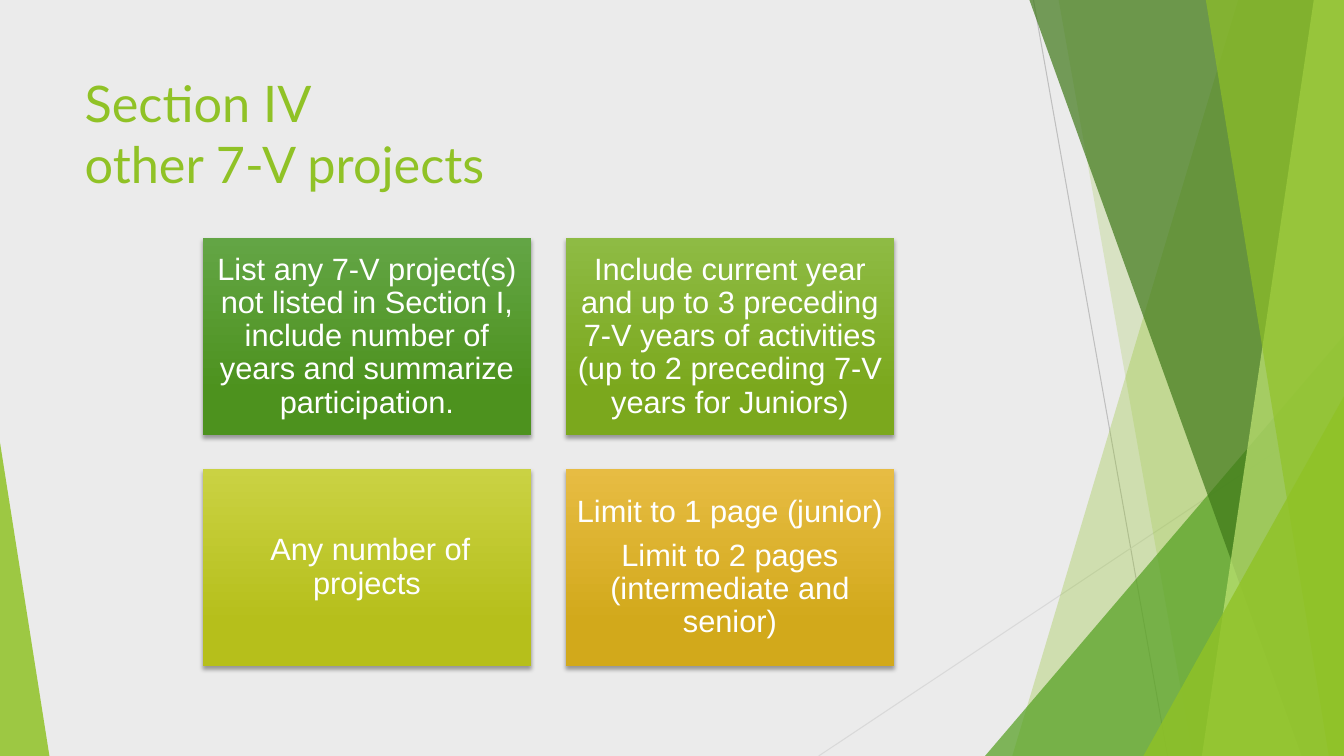
from dataclasses import dataclass

from lxml import etree
from pptx import Presentation
from pptx import util as u
from pptx.dml.color import RGBColor
from pptx.enum import shapes, text
from pptx.oxml.ns import qn

WIDTH, HEIGHT = 13.33, 7.5
COLORS = {
    "background": "EBEBEB", "lime": "90C226", "green": "54A021",
    "forest": "3F7819", "pale": "C0E474", "white": "FFFFFF",
    "shadow": "000000", "line": "BFBFBF", "light_line": "D9D9D9",
}


@dataclass
class Ray:
    start: tuple[float, float]
    end: tuple[float, float]
    color: str


@dataclass
class Wedge:
    """Band from a slanted left edge to the right side of the slide."""
    top_x: float
    bottom_x: float
    color: str
    opacity: int


@dataclass
class Corner:
    """Right triangle standing on the bottom of the slide."""
    left: float
    top: float
    width: float
    apex: float
    color: str
    opacity: int


@dataclass
class Card:
    paragraphs: list[str]
    light: str
    dark: str


RAYS = [
    Ray((10.25, 0), (11.58, HEIGHT), "line"),
    Ray((WIDTH, 4.03), (8.12, HEIGHT), "light_line"),
]
FACETS = [
    Wedge(12.28, 10.04, "lime", 30),
    Wedge(10.5, 11.83, "lime", 20),
    Corner(9.77, 3.33, 3.56, 1, "green", 72),
    Wedge(10.21, 12.91, "forest", 70),
    Wedge(13.03, 11.92, "pale", 70),
    Wedge(11.96, 13.18, "lime", 65),
    Corner(11.34, 3.93, 1.99, 1, "lime", 80),
    Corner(0, 4.39, 0.49, 0, "lime", 85),
]
CARDS = [
    Card(["List any 7-V project(s) not listed in Section I, include number of "
          "years and summarize participation."], "63A545", "4D921E"),
    Card(["Include current year and up to 3 preceding 7-V years of activities "
          "(up to 2 preceding 7-V years for Juniors)"], "8EBB44", "7BA81D"),
    Card([" Any number of projects"], "CAD243", "B6BF1B"),
    Card(["Limit to 1 page (junior)",
          "Limit to 2 pages (intermediate and senior)"], "E7BC43", "D2A91B"),
]
CARD_LEFT, CARD_TOP, CARD_WIDTH, CARD_HEIGHT = 2.01, 2.36, 3.26, 1.96
STEP_X, STEP_Y = 3.6, 2.29


def rgb(name: str) -> RGBColor:
    return RGBColor.from_string(COLORS.get(name, name))


def apply(target, values: dict) -> None:
    for name, value in values.items():
        setattr(target, name, value)


def style_text(para, size: float, font: str, color: str) -> None:
    for span in para.runs:
        apply(span.font, {"size": u.Pt(size), "name": font})
        span.font.color.rgb = rgb(color)


def draw_ray(page, ray: Ray) -> None:
    points = [u.Inches(value) for value in (*ray.start, *ray.end)]
    line = page.shapes.add_connector(shapes.MSO_CONNECTOR.STRAIGHT, *points)
    line.line.width = u.Pt(0.75)
    line.line.color.rgb = rgb(ray.color)
    etree.SubElement(line._element.spPr, qn("a:effectLst"))


def draw_facet(page, facet: Wedge | Corner) -> None:
    if isinstance(facet, Wedge):
        corners = [(facet.top_x, 0), (WIDTH, 0), (WIDTH, HEIGHT),
                   (facet.bottom_x, HEIGHT)]
        points = [(u.Inches(x), u.Inches(y)) for x, y in corners]
        builder = page.shapes.build_freeform(*points[0])
        builder.add_line_segments(points[1:], close=True)
        shape = builder.convert_to_shape()
    else:
        shape = page.shapes.add_shape(
            shapes.MSO_SHAPE.ISOSCELES_TRIANGLE,
            u.Inches(facet.left), u.Inches(facet.top),
            u.Inches(facet.width), u.Inches(HEIGHT - facet.top))
        shape.adjustments[0] = facet.apex
    shape.shadow.inherit = False
    shape.line.fill.background()
    shape.fill.solid()
    shape.fill.fore_color.rgb = rgb(facet.color)
    color = shape._element.spPr.find(".//" + qn("a:srgbClr"))
    etree.SubElement(color, qn("a:alpha"), val=str(facet.opacity * 1000))


def add_shadow(shape) -> None:
    shape.shadow.inherit = False
    effects = shape._element.spPr.find(qn("a:effectLst"))
    shadow = etree.SubElement(
        effects, qn("a:outerShdw"), blurRad=str(u.Pt(3)), dist=str(u.Pt(2)),
        dir="5400000", rotWithShape="0")
    color = etree.SubElement(shadow, qn("a:srgbClr"), val=COLORS["shadow"])
    etree.SubElement(color, qn("a:alpha"), val="35000")


def draw_card(page, card: Card, row: int, column: int) -> None:
    box = page.shapes.add_shape(
        shapes.MSO_SHAPE.RECTANGLE,
        u.Inches(CARD_LEFT + column * STEP_X), u.Inches(CARD_TOP + row * STEP_Y),
        u.Inches(CARD_WIDTH), u.Inches(CARD_HEIGHT))
    box.line.fill.background()
    box.fill.gradient()
    box.fill.gradient_angle = 270
    for stop, position, color in zip(box.fill.gradient_stops, (0, 0.78),
                                     (card.light, card.dark)):
        stop.position = position
        stop.color.rgb = rgb(color)
    add_shadow(box)

    frame = box.text_frame
    margins = ("margin_left", "margin_top", "margin_right", "margin_bottom")
    apply(frame, dict.fromkeys(margins, u.Inches(0.09)))
    apply(frame, {"word_wrap": True, "vertical_anchor": text.MSO_ANCHOR.MIDDLE})
    frame.text = "\n".join(card.paragraphs)
    for para in frame.paragraphs:
        apply(para, {"alignment": text.PP_ALIGN.CENTER, "line_spacing": 0.9,
                     "space_after": u.Pt(7.7)})
        style_text(para, 22, "Arial", "white")


def set_title(page) -> None:
    title = page.shapes.title
    apply(title, {"left": u.Inches(0.74), "top": u.Inches(0.67),
                  "width": u.Inches(9.4), "height": u.Inches(1.44)})
    frame = title.text_frame
    frame.text = "Section IV\vother 7-V projects"
    apply(frame, {"word_wrap": True, "auto_size": text.MSO_AUTO_SIZE.NONE,
                  "vertical_anchor": text.MSO_ANCHOR.TOP})
    para = frame.paragraphs[0]
    para.alignment = text.PP_ALIGN.LEFT
    style_text(para, 36, "Lato", "lime")


def main() -> None:
    deck = Presentation()
    apply(deck, {"slide_width": u.Inches(WIDTH), "slide_height": u.Inches(HEIGHT)})
    page = deck.slides.add_slide(deck.slide_layouts.get_by_name("Title Only"))
    page.background.fill.solid()
    page.background.fill.fore_color.rgb = rgb("background")

    # Faceted backdrop
    for ray in RAYS:
        draw_ray(page, ray)
    for facet in FACETS:
        draw_facet(page, facet)

    # Title and two-by-two cards
    set_title(page)
    for index, card in enumerate(CARDS):
        draw_card(page, card, *divmod(index, 2))

    deck.save("out.pptx")


if __name__ == "__main__":
    main()
